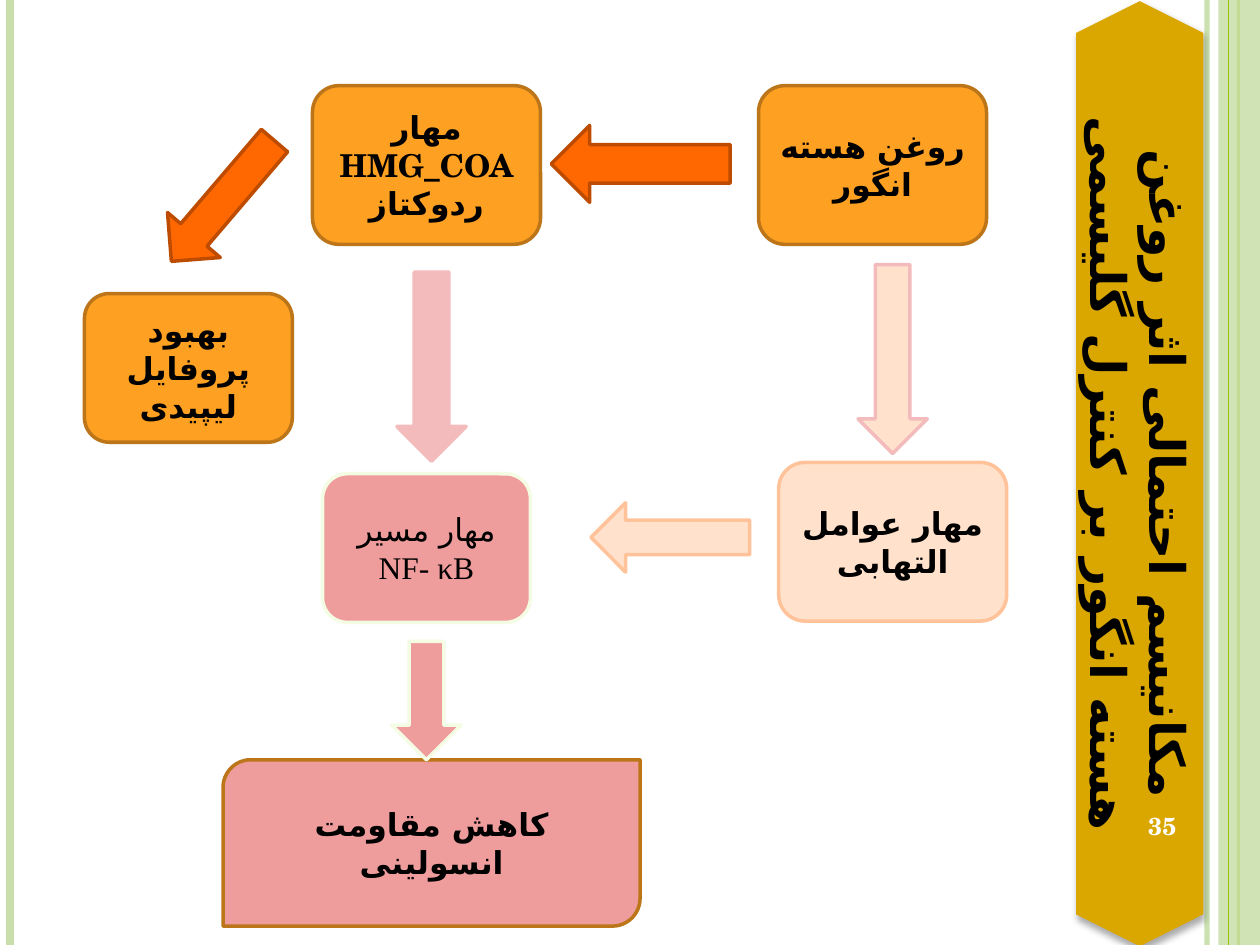
from dataclasses import dataclass

from lxml.etree import SubElement
from pptx import Presentation
from pptx.dml.color import RGBColor
from pptx.enum.shapes import MSO_CONNECTOR, MSO_SHAPE
from pptx.enum.text import MSO_ANCHOR, PP_ALIGN
from pptx.oxml.ns import qn
from pptx.util import Inches, Pt


@dataclass(frozen=True)
class Theme:
    """Colours, fonts and type sizes of the slide."""
    ink: str = "000000"
    white: str = "FFFFFF"
    green: str = "94C600"
    pale: str = "C8DFAB"
    gold: str = "DAA600"
    amber: str = "FEA022"
    brown: str = "BC7619"
    fire: str = "FF6700"
    rust: str = "BD4C00"
    peach: str = "FFE1CC"
    apricot: str = "FFC299"
    pink: str = "F3BBBB"
    rose: str = "EE9C9C"
    cream: str = "F4FCE4"
    body: str = "TeX Gyre Schola"
    serif: str = "Times New Roman"
    script: str = "DejaVu Sans"
    title: int = 28
    label: int = 18
    small: int = 14
    edge: float = 2


T = Theme()


def fade(fill, alpha):
    """Make a solid fill partly transparent, alpha in percent."""
    color = next(fill.iter(qn("a:srgbClr")))
    SubElement(color, qn("a:alpha"), val=str(alpha * 1000))


def shape(slide, kind, box, fill, line=None, turn=0):
    """Add a flat preset shape."""
    item = slide.shapes.add_shape(kind, *map(Inches, box))
    item.shadow.inherit = False
    item.rotation = turn
    item.fill.solid()
    item.fill.fore_color.rgb = RGBColor.from_string(fill)
    if line:
        item.line.color.rgb = RGBColor.from_string(line)
        item.line.width = Pt(T.edge)
    else:
        item.line.fill.background()
    return item


def write(item, parts, size, color=T.ink, bold=True, rtl=False):
    """Fill a shape with one centred paragraph of (text, font) parts."""
    frame = item.text_frame
    frame.word_wrap = True
    frame.vertical_anchor = MSO_ANCHOR.MIDDLE
    para = frame.paragraphs[0]
    para.alignment = PP_ALIGN.CENTER
    if rtl:
        para._p.get_or_add_pPr().set("rtl", "1")
    for text, face in parts:
        run = para.add_run()
        run.text = text
        font = run.font
        font.size, font.bold, font.name = Pt(size), bold, face
        font.color.rgb = RGBColor.from_string(color)
        SubElement(font._element, qn("a:cs"), typeface=T.script)


def rule(slide, x, top, height, color, width, alpha=None):
    """Draw a vertical rule."""
    ends = map(Inches, (x, top, x, top + height))
    line = slide.shapes.add_connector(MSO_CONNECTOR.STRAIGHT, *ends)
    line.line.color.rgb = RGBColor.from_string(color)
    line.line.width = Pt(width)
    SubElement(line._element.spPr, qn("a:effectLst"))
    if alpha:
        fade(line._element.spPr, alpha)


def border(slide, box):
    """Draw the green rules and band along both edges."""
    left, top, width, height = box
    right = left + width
    rule(slide, right - 0.42, top, height, T.pale, 3, 93)
    rule(slide, left + 0.08, top, height, T.pale, 4.5)
    rule(slide, right - 0.17, top, height, T.green, 1.5)
    band = shape(slide, MSO_SHAPE.RECTANGLE,
                 (right - 0.33, top, 0.33, height), T.pale)
    fade(band._element.spPr, 87)
    rule(slide, right - 0.25, top, height, T.green, 0.75)


def banner(slide, box):
    """Draw the upright title and the slide number inside it."""
    left, top, width, height = box
    flat = (left + (width - height) / 2, top + (height - width) / 2,
            height, width)
    item = shape(slide, MSO_SHAPE.HEXAGON, flat, T.gold, turn=90)
    glow = SubElement(item._element.spPr.find(qn("a:effectLst")),
                      qn("a:outerShdw"), blurRad=str(Pt(3.5)),
                      dist=str(Pt(2.2)), dir="5400000", rotWithShape="0")
    tint = SubElement(glow, qn("a:srgbClr"), val=T.ink)
    SubElement(tint, qn("a:alpha"), val="32000")
    title = "مکانیسم احتمالی اثر روغن هسته انگور بر کنترل گلیسمی"
    write(item, [(title, T.serif)], T.title, rtl=True)
    spot = (left + 0.35, top + 6.26, 0.67, 0.57)
    number = slide.shapes.add_textbox(*map(Inches, spot))
    write(number, [("35", T.body)], T.small, T.white)


def flow(slide, box):
    """Draw the boxes of the mechanism and the block arrows between them."""
    left, top = box[:2]
    big, mid = (1.81, 1.26), (1.65, 1.18)
    side, tall = (1.26, 0.55), (0.55, 1.5)
    card, leaf = MSO_SHAPE.ROUNDED_RECTANGLE, MSO_SHAPE.ROUND_2_DIAG_RECTANGLE
    back, down = MSO_SHAPE.LEFT_ARROW, MSO_SHAPE.DOWN_ARROW
    nodes = [
        (card, 5.35, 0, big, T.amber, T.brown, "روغن هسته انگور", False),
        (card, 1.81, 0, big, T.amber, T.brown, "مهار HMG_COA ردوکتاز", False),
        (card, 0, 1.65, mid, T.amber, T.brown, "بهبود پروفایل لیپیدی", False),
        (card, 5.51, 2.99, big, T.peach, T.apricot,
         "مهار عوامل التهابی", False),
        (leaf, 1.1, 5.35, (3.31, 1.32), T.rose, T.brown,
         "کاهش مقاومت انسولینی", True),
    ]
    for kind, x, y, size, fill, line, text, rtl in nodes:
        item = shape(slide, kind, (left + x, top + y, *size), fill, line)
        write(item, [(text, T.body)], T.label, rtl=rtl)
    route = shape(slide, card, (left + 1.89, top + 3.08, *mid),
                  T.rose, T.cream)
    write(route, [("مهار مسیر ", T.body), ("NF- κB", T.serif)], T.label,
          bold=False, rtl=True)
    arrows = [
        (back, 4.02, 3.31, side, T.peach, T.apricot, 0),
        (down, 6.14, 1.42, tall, T.peach, T.pink, 0),
        (MSO_SHAPE.UP_ARROW, 4.11, -0.09, (0.61, 1.42), T.fire, T.rust, 270),
        (back, 0.47, 0.64, side, T.fire, T.rust, 310.5),
        (down, 2.48, 1.48, tall, T.pink, T.pink, 0),
        (down, 2.44, 4.41, (0.55, 0.94), T.rose, T.cream, 0),
    ]
    for kind, x, y, size, fill, line, turn in arrows:
        shape(slide, kind, (left + x, top + y, *size), fill, line, turn)


def main():
    """Build and save the slide."""
    deck = Presentation()
    deck.slide_width, deck.slide_height = Inches(10), Inches(7.5)
    slide = deck.slides.add_slide(deck.slide_layouts[6])
    border(slide, (0, 0, 10, 7.5))
    banner(slide, (8.54, 0.01, 1.01, 7.5))
    flow(slide, (0.67, 0.68, 7.32, 6.67))
    deck.save("out.pptx")


if __name__ == "__main__":
    main()
